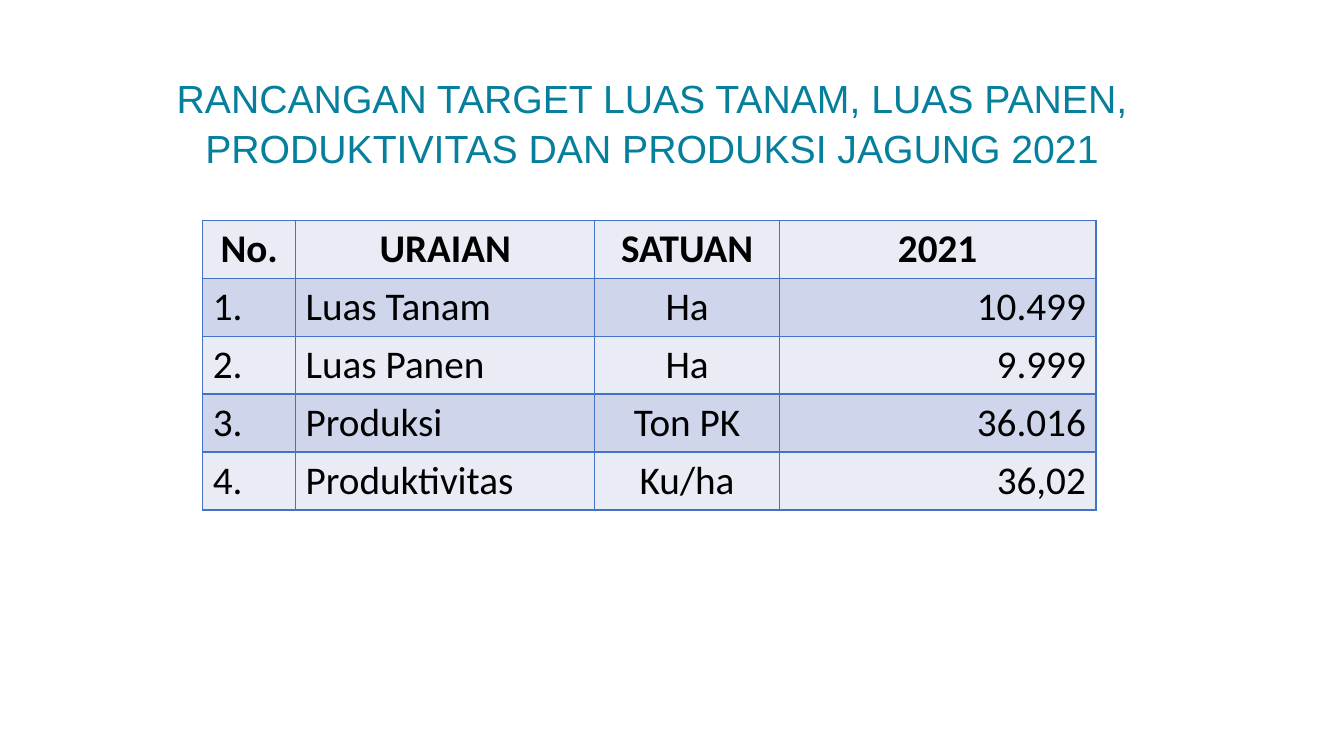
from lxml.etree import SubElement
from pptx import Presentation
from pptx.dml.color import RGBColor
from pptx.enum.text import MSO_ANCHOR, PP_ALIGN
from pptx.oxml.ns import qn
from pptx.util import Cm, Pt

TEAL = RGBColor(0x06, 0x7F, 0x9C)
BLACK = RGBColor(0x00, 0x00, 0x00)
BORDER_BLUE = RGBColor(0x44, 0x72, 0xC4)
LIGHT_BAND = RGBColor(0xE9, 0xEB, 0xF5)
DARK_BAND = RGBColor(0xCF, 0xD5, 0xEA)

TITLE = "RANCANGAN TARGET LUAS TANAM, LUAS PANEN, PRODUKTIVITAS DAN PRODUKSI JAGUNG 2021"
ROWS = [
    ("No.", "URAIAN", "SATUAN", "2021"),
    ("1.", "Luas Tanam", "Ha", "10.499"),
    ("2.", "Luas Panen", "Ha", "9.999"),
    ("3.", "Produksi", "Ton PK", "36.016"),
    ("4.", "Produktivitas", "Ku/ha", "36,02"),
]
COLUMN_WIDTHS = [Cm(2.34), Cm(7.54), Cm(4.65), Cm(7.98)]
COLUMN_ALIGNMENTS = [PP_ALIGN.LEFT, PP_ALIGN.LEFT, PP_ALIGN.CENTER, PP_ALIGN.RIGHT]
ROW_HEIGHT = Cm(1.46)


def add_span(para, text, font_name, color, bold=False):
    span = para.add_run()
    span.text = text
    span.font.name = font_name
    span.font.size = Pt(28)
    span.font.bold = bold
    span.font.color.rgb = color


def add_borders(cell):
    properties = cell._tc.get_or_add_tcPr()
    for position, side in enumerate(("a:lnL", "a:lnR", "a:lnT", "a:lnB")):
        line = SubElement(properties, qn(side), w=str(Pt(1)))
        fill = SubElement(line, qn("a:solidFill"))
        SubElement(fill, qn("a:srgbClr"), val=str(BORDER_BLUE))
        properties.insert(position, line)  # borders come before the cell fill


deck = Presentation()
deck.slide_width = Cm(33.87)
deck.slide_height = Cm(19.05)
page = deck.slides.add_slide(deck.slide_layouts[6])

# Title
box = page.shapes.add_textbox(Cm(3.68), Cm(1.73), Cm(25.5), Cm(2.67))
box.text_frame.word_wrap = True
box.text_frame.vertical_anchor = MSO_ANCHOR.MIDDLE
para = box.text_frame.paragraphs[0]
para.alignment = PP_ALIGN.CENTER
para.line_spacing = 1.05
add_span(para, TITLE, "Arial", TEAL)

# Target table
frame = page.shapes.add_table(
    len(ROWS), len(COLUMN_WIDTHS), Cm(5.11), Cm(5.55),
    sum(COLUMN_WIDTHS), ROW_HEIGHT * len(ROWS),
)
table = frame.table
for column, width in zip(table.columns, COLUMN_WIDTHS):
    column.width = width

for row_number, texts in enumerate(ROWS):
    is_header = row_number == 0
    for column_number, text in enumerate(texts):
        cell = table.cell(row_number, column_number)
        cell.fill.solid()
        cell.fill.fore_color.rgb = DARK_BAND if row_number % 2 else LIGHT_BAND
        add_borders(cell)
        para = cell.text_frame.paragraphs[0]
        para.alignment = PP_ALIGN.CENTER if is_header else COLUMN_ALIGNMENTS[column_number]
        add_span(para, text, "Calibri", BLACK, bold=is_header)

deck.save("out.pptx")
